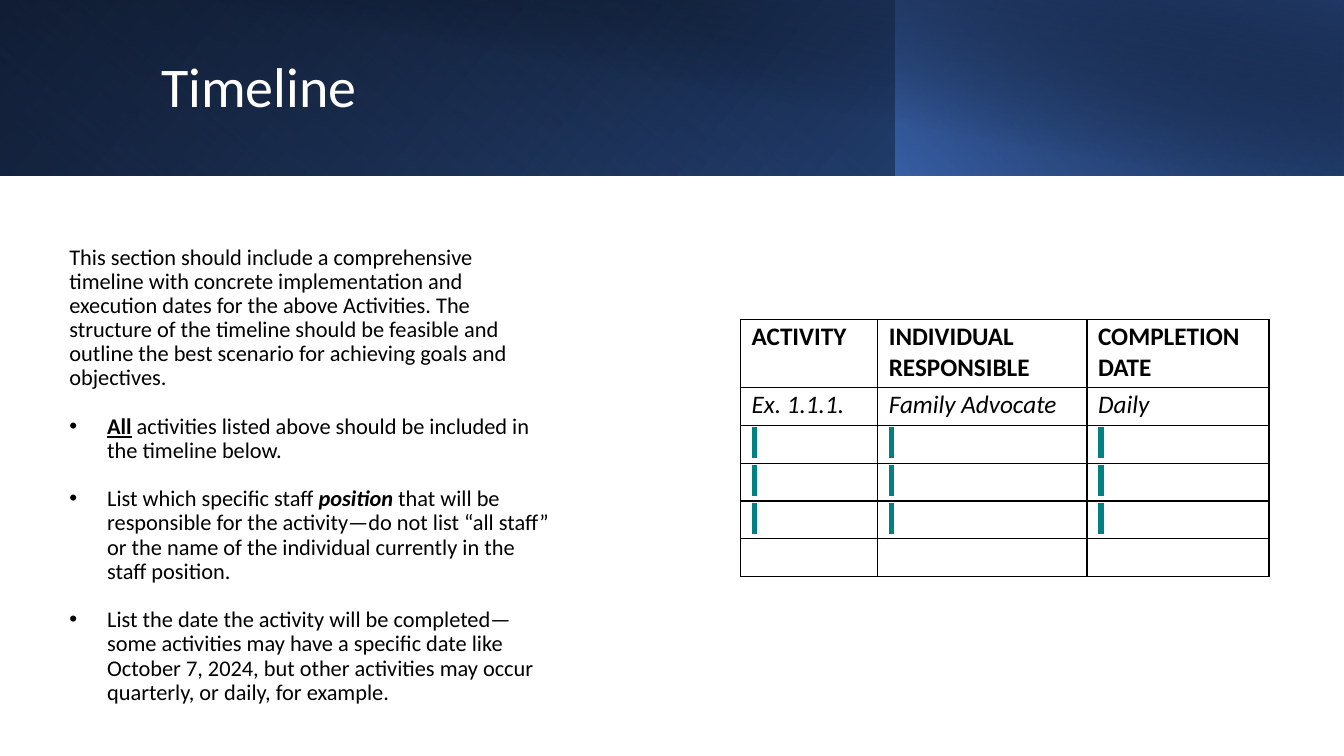
import pptx
import pptx.util
import pptx.dml.color
import pptx.enum.shapes
import pptx.enum.text
import pptx.oxml.ns
from dataclasses import dataclass
from lxml import etree

Pt = pptx.util.Pt
qn = pptx.oxml.ns.qn


@dataclass(frozen=True)
class Theme:
    font: str = "Calibri"
    title_size: float = 40
    body_size: float = 16
    table_size: float = 18
    white: str = "FFFFFF"
    black: str = "000000"
    blue: str = "4472C4"
    mid_blue: str = "2F5597"
    navy: str = "203864"
    teal: str = "008080"


THEME = Theme()

INTRO = ("This section should include a comprehensive timeline with concrete "
         "implementation and execution dates for the above Activities. The structure "
         "of the timeline should be feasible and outline the best scenario for "
         "achieving goals and objectives.")
# Each bullet is a list of (text, emphasis) runs
BULLETS = [
    [("All", ("bold", "underline")),
     (" activities listed above should be included in the timeline below.", ())],
    [("List which specific staff ", ()),
     ("position", ("bold", "italic")),
     (" that will be responsible for the activity—do not list “all staff” or the "
      "name of the individual currently in the staff position.", ())],
    [("List the date the activity will be completed—some activities may have a "
      "specific date like October 7, 2024, but other activities may occur "
      "quarterly, or daily, for example.", ())],
]
HEADINGS = ["ACTIVITY", "INDIVIDUAL RESPONSIBLE", "COMPLETION DATE"]
EXAMPLE = ["Ex. 1.1.1.", "Family Advocate", "Daily"]
MARKED_ROWS = 3


def add(parent, tag, **attributes):
    element = etree.SubElement(parent, qn(tag))
    for key, value in attributes.items():
        element.set(key, str(value))
    return element


def style(font, size, color):
    font.name = THEME.font
    font.size = Pt(size)
    font.color.rgb = pptx.dml.color.RGBColor.from_string(color)


def add_text_frame(slide, left, top, width, height, anchor):
    frame = slide.shapes.add_textbox(Pt(left), Pt(top), Pt(width), Pt(height)).text_frame
    frame.word_wrap = True
    frame.vertical_anchor = anchor
    return frame


def add_gradient(slide, left, top, width, height, stops, angle, flip=True, rotation=0):
    """Rectangle with (position %, colour, opacity %) stops; angle runs clockwise."""
    panel = slide.shapes.add_shape(pptx.enum.shapes.MSO_SHAPE.RECTANGLE,
                                   Pt(left), Pt(top), Pt(width), Pt(height))
    panel.shadow.inherit = False
    panel.line.fill.background()
    panel.rotation = rotation
    properties = panel._element.spPr
    if flip:
        properties.find(qn("a:xfrm")).set("flipH", "1")
    gradient = add(properties, "a:gradFill", rotWithShape=1)
    stop_list = add(gradient, "a:gsLst")
    for position, color, opacity in stops:
        stop = add(stop_list, "a:gs", pos=position * 1000)
        add(add(stop, "a:srgbClr", val=color), "a:alpha", val=opacity * 1000)
    add(gradient, "a:lin", ang=angle * 60000, scaled=0)
    properties.find(qn("a:prstGeom")).addnext(gradient)


def build_banner(slide, left, top, width, height):
    split = width * 2 / 3
    # Layered gradients, back to front
    add_gradient(slide, left, top, width, height,
                 [(0, THEME.black, 100), (100, THEME.mid_blue, 100)], 140)
    add_gradient(slide, left, top, split, height,
                 [(20, THEME.blue, 0), (100, THEME.navy, 55)], 230, rotation=180)
    add_gradient(slide, left + split, top, width - split, height,
                 [(0, THEME.blue, 66), (100, THEME.black, 30)], 220)
    add_gradient(slide, left + 36, top, width - 36, height,
                 [(50, THEME.black, 0), (99, THEME.navy, 52)], 280, flip=False)
    # Title
    frame = add_text_frame(slide, left + 108, top + 23, width - 181, 81.5,
                           pptx.enum.text.MSO_ANCHOR.MIDDLE)
    title = frame.paragraphs[0]
    title.text = "Timeline"
    title.line_spacing = 0.9
    style(title.font, THEME.title_size, THEME.white)


def build_guidance(slide, left, top, width, height):
    frame = add_text_frame(slide, left, top, width, height,
                           pptx.enum.text.MSO_ANCHOR.TOP)
    intro = frame.paragraphs[0]
    intro.text = INTRO
    for runs in BULLETS:
        bullet = frame.add_paragraph()
        bullet.space_before = Pt(17.3)
        for text, emphasis in runs:
            run = bullet.add_run()
            run.text = text
            for effect in emphasis:
                setattr(run.font, effect, True)
        properties = bullet._p.get_or_add_pPr()
        properties.set("marL", str(Pt(27)))
        properties.set("indent", str(-Pt(27)))
        add(properties, "a:buFont", typeface="Arial")
        add(properties, "a:buChar", char="•")
    for paragraph in frame.paragraphs:
        paragraph.line_spacing = 0.9
        style(paragraph.font, THEME.body_size, THEME.black)


def style_cell(cell):
    cell.margin_left = cell.margin_right = Pt(7.9)
    cell.margin_top, cell.margin_bottom = Pt(1.4), Pt(0)
    cell.fill.background()
    properties = cell._tc.get_or_add_tcPr()
    for index, side in enumerate(("a:lnL", "a:lnR", "a:lnT", "a:lnB")):
        border = add(properties, side, w=Pt(1))
        add(add(border, "a:solidFill"), "a:srgbClr", val=THEME.black)
        properties.insert(index, border)


def build_schedule(slide, left, top, column_widths, row_heights):
    frame = slide.shapes.add_table(len(row_heights), len(column_widths), Pt(left), Pt(top),
                                   Pt(sum(column_widths)), Pt(sum(row_heights)))
    schedule = frame.table
    schedule.first_row = schedule.horz_banding = False
    for column, width in zip(schedule.columns, column_widths):
        column.width = Pt(width)
    for row, height in zip(schedule.rows, row_heights):
        row.height = Pt(height)
    # Headings, example, marked entry fields, then an empty row
    entries = [HEADINGS, EXAMPLE] + [[" "] * 3] * MARKED_ROWS + [[""] * 3]
    for row_index, texts in enumerate(entries):
        for column_index, text in enumerate(texts):
            cell = schedule.cell(row_index, column_index)
            style_cell(cell)
            entry = cell.text_frame.paragraphs[0]
            style(entry.font, THEME.table_size, THEME.black)
            entry.font.bold = texts is HEADINGS
            entry.font.italic = texts is EXAMPLE
            if text:
                run = entry.add_run()
                run.text = text
                if text == " ":
                    highlight = add(run._r.get_or_add_rPr(), "a:highlight")
                    add(highlight, "a:srgbClr", val=THEME.teal)
            else:
                add(entry._p, "a:endParaRPr", sz=int(THEME.table_size * 100))


def main():
    deck = pptx.Presentation()
    deck.slide_width, deck.slide_height = Pt(960), Pt(540)
    slide = deck.slides.add_slide(deck.slide_layouts[6])
    build_banner(slide, 0, 0, 960, 125.5)
    build_guidance(slide, 42.5, 172, 357, 335)
    build_schedule(slide, 529, 228.3, [98, 149.5, 130], [48.6] + [27] * 5)
    deck.save("out.pptx")


if __name__ == "__main__":
    main()
